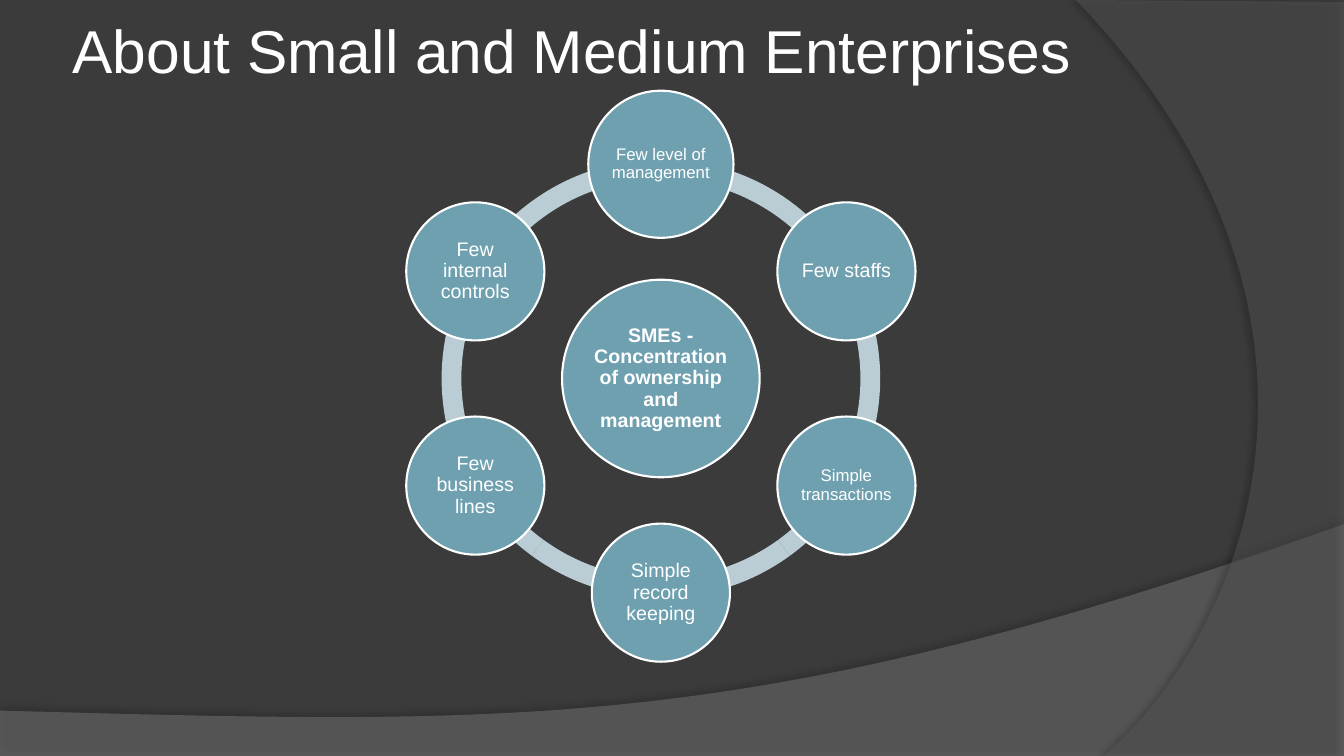
from math import cos, radians, sin

from lxml.etree import SubElement
from pptx import Presentation
from pptx.dml.color import RGBColor
from pptx.enum.shapes import MSO_SHAPE as Preset
from pptx.enum.text import MSO_ANCHOR as Anchor, PP_ALIGN as Align
from pptx.oxml.ns import qn
from pptx.util import Inches, Pt

FONT = "Arial"
WHITE, TEAL, PALE = "FFFFFF", "6EA0B0", "BACDD4"
CENTER_X, CENTER_Y = 6.555, 3.755
ORBIT = 2.125
RING_SIZE = 4.35
ARC_ANGLES = [18, 54, 90, 126, 162, 198]

# Clockwise from the top: text, size in points, circle width and height
FEATURES = [
    ("Few level of management", 12, 1.44, 1.46),
    ("Few staffs", 14, 1.37, 1.37),
    ("Simple transactions", 12, 1.37, 1.37),
    ("Simple record keeping", 14, 1.37, 1.37),
    ("Few business lines", 14, 1.37, 1.37),
    ("Few internal controls", 14, 1.37, 1.37),
]


def color(value):
    return RGBColor.from_string(value)


def paint(shape, fill, line=None):
    shape.shadow.inherit = False
    shape.fill.solid()
    shape.fill.fore_color.rgb = color(fill)
    if line:
        shape.line.color.rgb = color(line)
        shape.line.width = Pt(1.5)
    else:
        shape.line.fill.background()


def write(shape, text, size, align, inset, bold=False):
    frame = shape.text_frame
    frame.word_wrap = True
    frame.vertical_anchor = Anchor.MIDDLE
    frame.margin_left = frame.margin_right = Inches(inset)
    frame.margin_top = frame.margin_bottom = Inches(inset)
    para = frame.paragraphs[0]
    para.alignment = align
    span = para.add_run()
    span.text = text
    span.font.name = FONT
    span.font.size = Pt(size)
    span.font.bold = bold
    span.font.color.rgb = color(WHITE)
    return para


def bezier(start, pull_a, pull_b, end, steps=60):
    """Points along a cubic curve, both ends included."""
    points = []
    for step in range(steps + 1):
        t = step / steps
        weights = ((1 - t) ** 3, 3 * t * (1 - t) ** 2, 3 * t * t * (1 - t), t ** 3)
        corners = (start, pull_a, pull_b, end)
        points.append(tuple(sum(w * c[axis] for w, c in zip(weights, corners))
                            for axis in (0, 1)))
    return points


def add_backdrop(page, points, fill, opacity, shade, distance, direction):
    outline = [(Inches(x), Inches(y)) for x, y in points]
    builder = page.shapes.build_freeform(*outline[0])
    builder.add_line_segments(outline[1:], close=True)
    shape = builder.convert_to_shape()
    paint(shape, fill)
    properties = shape.element.spPr
    # Transparency of the fill
    tone = properties.find(qn("a:solidFill"))[0]
    SubElement(tone, qn("a:alpha"), val=str(opacity * 1000))
    # Soft shadow along the curved edge
    effects = properties.find(qn("a:effectLst"))
    shadow = SubElement(effects, qn("a:outerShdw"), blurRad=str(Pt(4)),
                        dist=str(Pt(distance)), dir=str(direction * 60000),
                        algn="ctr", rotWithShape="0")
    black = SubElement(shadow, qn("a:srgbClr"), val="000000")
    SubElement(black, qn("a:alpha"), val=str(shade * 1000))


def add_title(page, text):
    title = page.shapes.title
    title.left, title.top = Inches(0.67), Inches(0.05)
    title.width, title.height = Inches(10.89), Inches(0.87)
    write(title, text, 43.2, Align.LEFT, 0.05)
    # Bring the title in front of the backdrop
    title.element.getparent().append(title.element)


def add_centered(page, preset, x, y, width, height):
    return page.shapes.add_shape(preset, Inches(x - width / 2), Inches(y - height / 2),
                                 Inches(width), Inches(height))


def add_arc(page, start, end):
    arc = add_centered(page, Preset.BLOCK_ARC, CENTER_X, CENTER_Y, RING_SIZE, RING_SIZE)
    # Angles are stored in 60000ths of a degree, adjustments in 100000ths
    arc.adjustments[0] = start * 0.6
    arc.adjustments[1] = end * 0.6
    arc.adjustments[2] = 0.045
    paint(arc, PALE)


def add_circle(page, x, y, width, height, text, size, bold=False):
    circle = add_centered(page, Preset.OVAL, x, y, width, height)
    paint(circle, TEAL, WHITE)
    para = write(circle, text, size, Align.CENTER, 0.02, bold)
    para.line_spacing = 0.9


def main():
    deck = Presentation()
    deck.slide_width, deck.slide_height = Inches(13.33), Inches(7.5)
    page = deck.slides.add_slide(deck.slide_layouts[5])
    page.background.fill.solid()
    page.background.fill.fore_color.rgb = color("3B3B3B")

    # Backdrop: wave at the bottom, curved band on the right
    wave = [(0, 7.5), (13.33, 7.5)]
    wave += bezier((13.33, 5.2), (7.45, 7.29), (5.21, 7.19), (0, 7.05))
    add_backdrop(page, wave, "7F7F7F", 45, 35, 3.5, 270)
    band = [(13.33, 0.02), (13.33, 7.5)]
    band += bezier((10.95, 7.5), (12.46, 6.19), (13.57, 3), (10.67, 0))
    add_backdrop(page, band, "5E5E5E", 40, 45, 4, 180)

    add_title(page, "About Small and Medium Enterprises")

    # Ring of arcs
    for start, end in zip(ARC_ANGLES, ARC_ANGLES[1:] + ARC_ANGLES[:1]):
        add_arc(page, start, end)

    # Hub and the features around it
    add_circle(page, CENTER_X, CENTER_Y, 1.96, 1.96,
               "SMEs - Concentration of ownership and management", 14, bold=True)
    for index, (text, size, width, height) in enumerate(FEATURES):
        angle = radians(360 / len(FEATURES) * index - 90)
        add_circle(page, CENTER_X + ORBIT * cos(angle), CENTER_Y + ORBIT * sin(angle),
                   width, height, text, size)

    deck.save("out.pptx")


if __name__ == "__main__":
    main()
